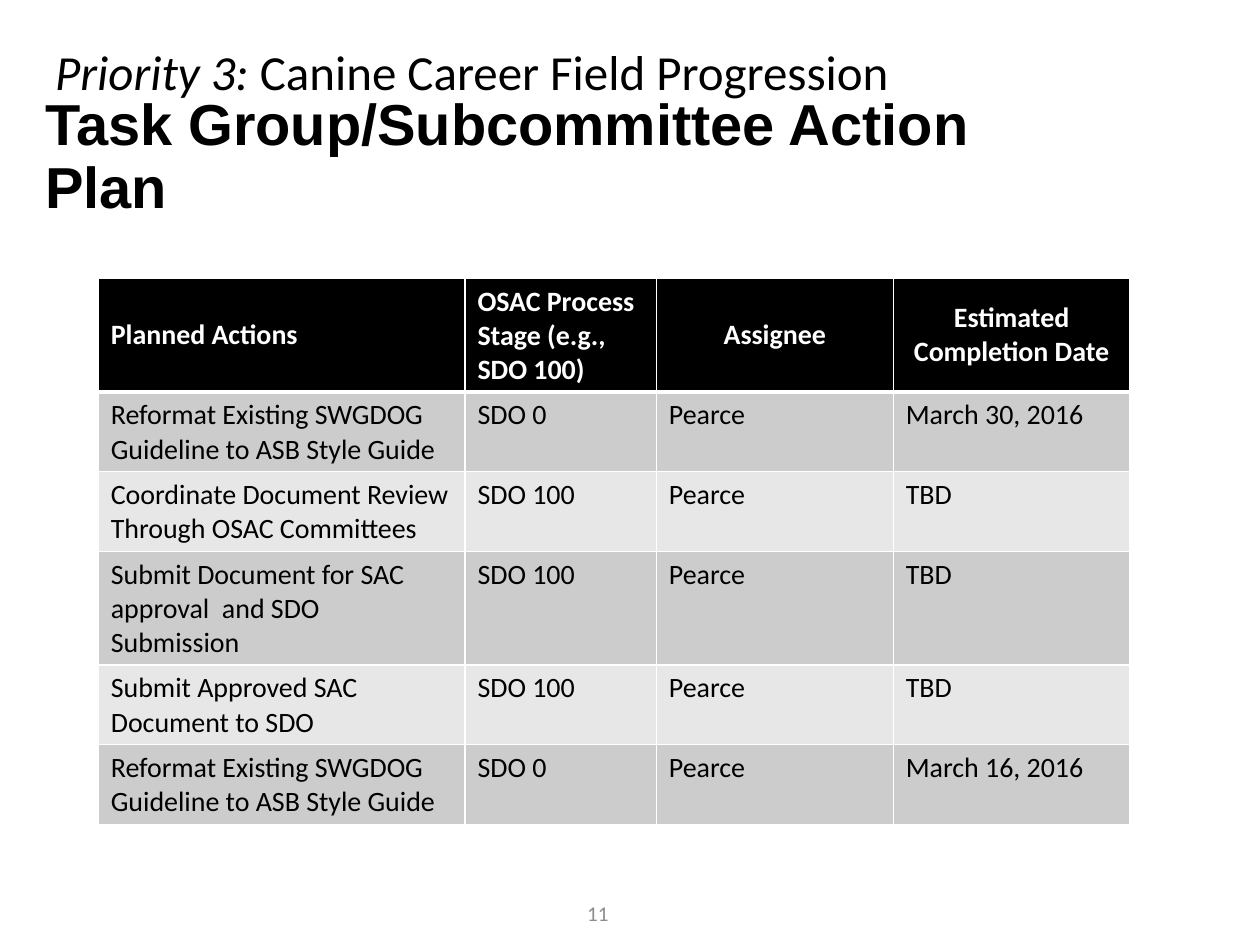
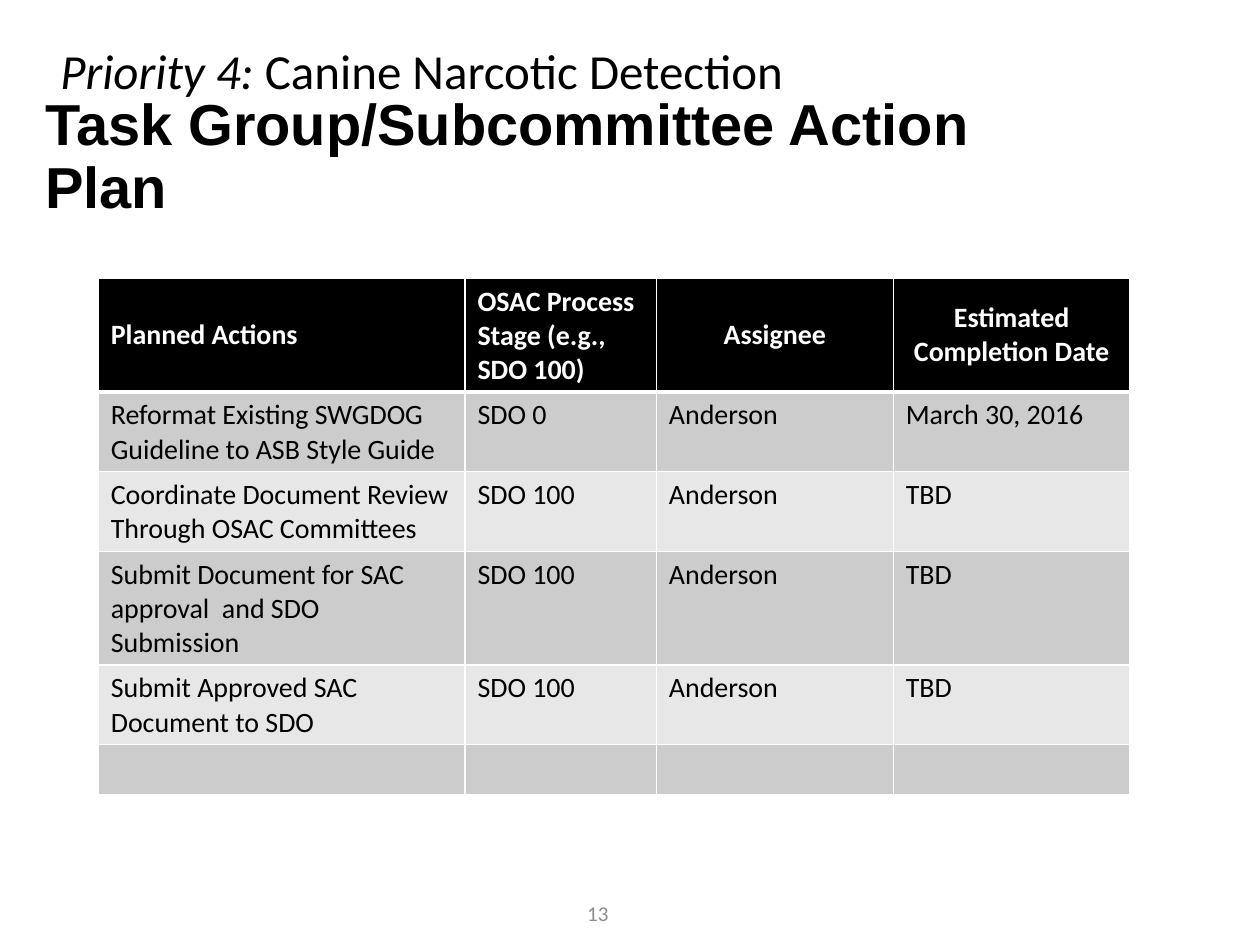
from lxml import etree
from pptx import Presentation
from pptx.dml.color import RGBColor
from pptx.enum.text import MSO_ANCHOR, PP_ALIGN
from pptx.oxml.ns import qn
from pptx.util import Inches, Pt

BLACK = RGBColor(0x00, 0x00, 0x00)
WHITE = RGBColor(0xFF, 0xFF, 0xFF)
DARK_BAND = RGBColor(0xCC, 0xCC, 0xCC)
LIGHT_BAND = RGBColor(0xE7, 0xE7, 0xE7)
NUMBER_GREY = RGBColor(0x8C, 0x8C, 0x8C)

LEFT, CENTER = PP_ALIGN.LEFT, PP_ALIGN.CENTER
TOP, MIDDLE = MSO_ANCHOR.TOP, MSO_ANCHOR.MIDDLE

HEADING_FONT = "Arial"
BODY_FONT = "Calibri"
BLANK_LAYOUT = 6

TITLE = "Task Group/Subcommittee Action Plan"
HEADERS = [
    ("Planned Actions", LEFT),
    ("OSAC Process Stage (e.g., SDO 100)", LEFT),
    ("Assignee", CENTER),
    ("Estimated Completion Date", CENTER),
]
COLUMN_WIDTHS = [2.91, 1.52, 1.88, 1.88]
HEADER_HEIGHT = 0.67
ROW_HEIGHT = 0.4
THIN_LINE, THICK_LINE = 1, 3

REFORMAT = "Reformat Existing SWGDOG Guideline to ASB Style Guide"
COMMON_ACTIONS = [
    (REFORMAT, "SDO 0", "March 30, 2016"),
    ("Coordinate Document Review Through OSAC Committees", "SDO 100", "TBD"),
    ("Submit Document for SAC approval  and SDO Submission", "SDO 100", "TBD"),
    ("Submit Approved SAC Document to SDO", "SDO 100", "TBD"),
]
FINAL_REFORMAT = (REFORMAT, "SDO 0", "March 16, 2016")


def add_run(paragraph, text, size, color, font=BODY_FONT, bold=False, italic=False):
    """Append one formatted run to a paragraph."""
    run = paragraph.add_run()
    run.text = text
    run.font.name = font
    run.font.size = Pt(size)
    run.font.color.rgb = color
    run.font.bold = bold
    run.font.italic = italic


def add_text_box(slide, left, top, width, height, anchor=TOP, alignment=LEFT):
    """Add a wrapping text box and return its first paragraph."""
    shape = slide.shapes.add_textbox(
        Inches(left), Inches(top), Inches(width), Inches(height))
    shape.text_frame.word_wrap = True
    shape.text_frame.vertical_anchor = anchor
    paragraph = shape.text_frame.paragraphs[0]
    paragraph.alignment = alignment
    return paragraph


def add_title(slide):
    """Add the title shared by all action plans."""
    paragraph = add_text_box(slide, 0.26, 0.53, 8.62, 1.45, MIDDLE)
    paragraph.line_spacing = 0.9
    add_run(paragraph, TITLE, 33, BLACK, HEADING_FONT, bold=True)


def add_priority(slide, number, topic, left, top, width):
    """Add the priority line above the title."""
    paragraph = add_text_box(slide, left, top, width, 0.57)
    add_run(paragraph, f"Priority {number}: ", 28, BLACK, italic=True)
    add_run(paragraph, topic, 28, BLACK)


def add_slide_number(slide, number):
    """Add the page number at the foot of the slide."""
    paragraph = add_text_box(slide, 3.62, 7.05, 2.25, 0.4, MIDDLE, CENTER)
    add_run(paragraph, str(number), 12, NUMBER_GREY)


def set_borders(cell, top, bottom):
    """Draw white borders around a cell, with given top and bottom widths."""
    properties = cell._tc.get_or_add_tcPr()
    widths = {"lnL": THIN_LINE, "lnR": THIN_LINE, "lnT": top, "lnB": bottom}
    for side, width in widths.items():
        line = etree.SubElement(properties, qn(f"a:{side}"), w=str(Pt(width)))
        fill = etree.SubElement(line, qn("a:solidFill"))
        etree.SubElement(fill, qn("a:srgbClr"), val=str(WHITE))


def fill_cell(cell, text, row_index, alignment=LEFT):
    """Style one cell by its row and write its text."""
    is_header = row_index == 0
    set_borders(cell,
                top=THICK_LINE if row_index == 1 else THIN_LINE,
                bottom=THICK_LINE if is_header else THIN_LINE)
    cell.fill.solid()
    band = DARK_BAND if row_index % 2 else LIGHT_BAND
    cell.fill.fore_color.rgb = BLACK if is_header else band
    cell.vertical_anchor = MIDDLE if is_header else TOP
    if text:
        paragraph = cell.text_frame.paragraphs[0]
        paragraph.alignment = alignment
        add_run(paragraph, text, 16, WHITE if is_header else BLACK, bold=is_header)


def add_action_table(slide, rows):
    """Add the table of planned actions under its header row."""
    height = HEADER_HEIGHT + ROW_HEIGHT * len(rows)
    table = slide.shapes.add_table(
        len(rows) + 1, len(HEADERS), Inches(0.78), Inches(2.21),
        Inches(sum(COLUMN_WIDTHS)), Inches(height)).table
    for column, width in zip(table.columns, COLUMN_WIDTHS):
        column.width = Inches(width)
    for row in table.rows:
        row.height = Inches(ROW_HEIGHT)
    table.rows[0].height = Inches(HEADER_HEIGHT)
    for column_index, (header, alignment) in enumerate(HEADERS):
        fill_cell(table.cell(0, column_index), header, 0, alignment)
    for row_index, values in enumerate(rows, start=1):
        for column_index, value in enumerate(values):
            fill_cell(table.cell(row_index, column_index), value, row_index)


def assign(actions, assignee):
    """Return table rows with the assignee placed before the date."""
    return [(action, stage, assignee, date) for action, stage, date in actions]


def add_plan_slide(presentation, priority, rows, number):
    """Add one complete action plan slide."""
    slide = presentation.slides.add_slide(presentation.slide_layouts[BLANK_LAYOUT])
    add_title(slide)
    add_action_table(slide, rows)
    add_priority(slide, *priority)
    add_slide_number(slide, number)


def main():
    """Build the presentation and save it."""
    presentation = Presentation()
    presentation.slide_width = Inches(10)
    presentation.slide_height = Inches(7.5)
    add_plan_slide(
        presentation, (3, "Canine Career Field Progression", 0.34, 0.28, 8.04),
        assign(COMMON_ACTIONS + [FINAL_REFORMAT], "Pearce"), 11)
    empty_row = ("",) * len(HEADERS)
    add_plan_slide(
        presentation, (4, "Canine Narcotic Detection", 0.38, 0.27, 7.58),
        assign(COMMON_ACTIONS, "Anderson") + [empty_row], 13)
    presentation.save("out.pptx")


if __name__ == "__main__":
    main()
